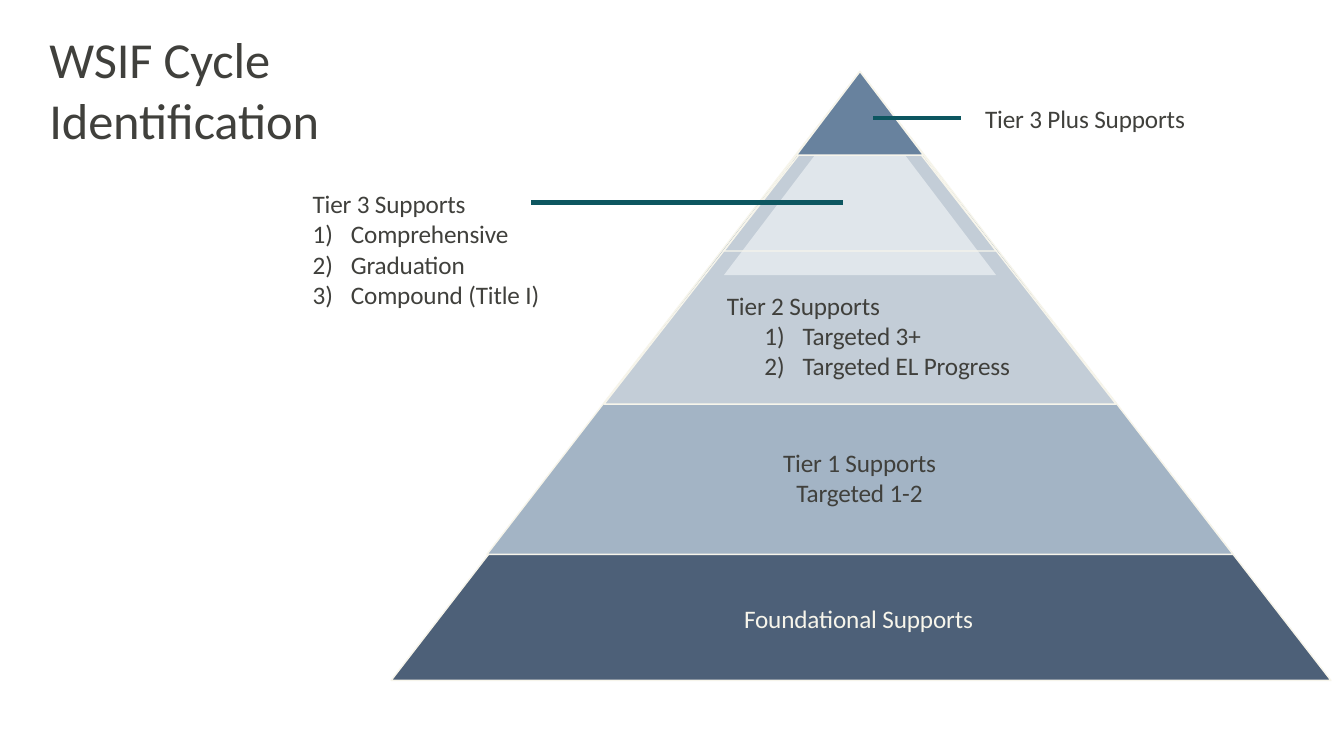
from lxml import etree
from pptx import Presentation
from pptx.dml.color import RGBColor
from pptx.enum.shapes import MSO_CONNECTOR
from pptx.enum.text import MSO_ANCHOR, MSO_AUTO_SIZE, PP_ALIGN
from pptx.oxml.ns import qn
from pptx.util import Inches, Pt

STRAIGHT = MSO_CONNECTOR.STRAIGHT
TOP = MSO_ANCHOR.TOP
NO_FIT = MSO_AUTO_SIZE.NONE
LEFT, CENTER = PP_ALIGN.LEFT, PP_ALIGN.CENTER

FONT = "Calibri"
DARK, CREAM, TEAL = "40403C", "F7F5EB", "0D5660"
APEX_X = 8.53
TITLE_LAYOUT = 5


def colour(value):
    return RGBColor.from_string(value)


def add_triangle(slide, apex_y, base_y, left, right, fill=None):
    """Draw a filled triangle, or a cream outline when no fill is given."""
    builder = slide.shapes.build_freeform(
        Inches(APEX_X), Inches(apex_y), scale=1.0)
    builder.add_line_segments(
        [(Inches(left), Inches(base_y)), (Inches(right), Inches(base_y))])
    triangle = builder.convert_to_shape()
    triangle.shadow.inherit = False
    if fill:
        triangle.fill.solid()
        triangle.fill.fore_color.rgb = colour(fill)
        triangle.line.fill.background()
    else:
        triangle.fill.background()
        triangle.line.color.rgb = colour(CREAM)
        triangle.line.width = Pt(1)


def number_paragraph(para):
    properties = para._p.get_or_add_pPr()
    properties.set("marL", str(Inches(0.39)))
    properties.set("indent", str(Inches(-0.38)))
    number = etree.SubElement(properties, qn("a:buAutoNum"))
    number.set("type", "arabicParenR")


def fill_text(shape, lines, size, text_colour, align=LEFT, numbered=False):
    frame = shape.text_frame
    frame.word_wrap = True
    frame.auto_size = NO_FIT
    frame.vertical_anchor = TOP
    frame.margin_left = frame.margin_right = 0
    frame.margin_top = frame.margin_bottom = 0
    frame.text = "\n".join(lines)
    for para in frame.paragraphs:
        para.alignment = align
        if numbered:
            number_paragraph(para)
        for span in para.runs:
            span.font.name = FONT
            span.font.size = Pt(size)
            span.font.color.rgb = colour(text_colour)
            span._r.get_or_add_rPr().set("spc", "-10")


def add_label(slide, left, top, width, lines, text_colour=DARK, **options):
    height = 0.03 + 0.3 * len(lines)
    box = slide.shapes.add_textbox(
        Inches(left), Inches(top), Inches(width), Inches(height))
    fill_text(box, lines, 18, text_colour, **options)


def add_pointer(slide, start_x, end_x, y):
    pointer = slide.shapes.add_connector(
        STRAIGHT, Inches(start_x), Inches(y), Inches(end_x), Inches(y))
    pointer.line.color.rgb = colour(TEAL)
    pointer.line.width = Pt(3)
    etree.SubElement(pointer._element.spPr, qn("a:effectLst"))


def set_title(slide, text):
    title = slide.shapes.title
    title.left, title.top = Inches(0.49), Inches(0.28)
    title.width, title.height = Inches(3.9), Inches(1.21)
    fill_text(title, [text], 36, DARK)


def main():
    deck = Presentation()
    deck.slide_width, deck.slide_height = Inches(13.33), Inches(7.5)
    slide = deck.slides.add_slide(deck.slide_layouts[TITLE_LAYOUT])
    set_title(slide, "WSIF Cycle Identification")

    # Pyramid, widest tier first: fill, left, right, then apex and base
    # heights of the filled triangle and of its outline
    tiers = [
        ("4D6078", 3.88, 13.2, (0.72, 6.75), (0.73, 6.75)),
        ("A3B4C5", 4.83, 12.23, (0.71, 5.5), (0.71, 5.5)),
        ("C3CDD7", 5.99, 11.07, (0.76, 4.01), (0.76, 4.01)),
        ("E0E6EB", 7.18, 9.88, (0.95, 2.73), (0.71, 2.49)),
        ("68829E", 7.9, 9.16, (0.71, 1.54), (0.71, 1.54)),
    ]
    for fill, left, right, filled, outlined in tiers:
        add_triangle(slide, *filled, left, right, fill)
        add_triangle(slide, *outlined, left, right)

    # Pointers from the upper tiers to their labels
    add_pointer(slide, 5.27, 8.36, 2.01)
    add_pointer(slide, 8.66, 9.53, 1.17)

    # Tier labels
    add_label(slide, 9.77, 1.03, 2.04, ["Tier 3 Plus Supports"])
    add_label(slide, 3.1, 1.87, 1.57, ["Tier 3 Supports"])
    add_label(slide, 3.09, 2.17, 2.3,
              ["Comprehensive", "Graduation", "Compound (Title I)"],
              numbered=True)
    add_label(slide, 7.21, 2.88, 1.57, ["Tier 2 Supports"])
    add_label(slide, 7.57, 3.18, 2.49,
              ["Targeted 3+", "Targeted EL Progress"], numbered=True)
    add_label(slide, 7.74, 4.44, 1.57,
              ["Tier 1 Supports", "Targeted 1-2"], align=CENTER)
    add_label(slide, 7.38, 5.99, 2.33, ["Foundational Supports"], CREAM)

    deck.save("out.pptx")


if __name__ == "__main__":
    main()
